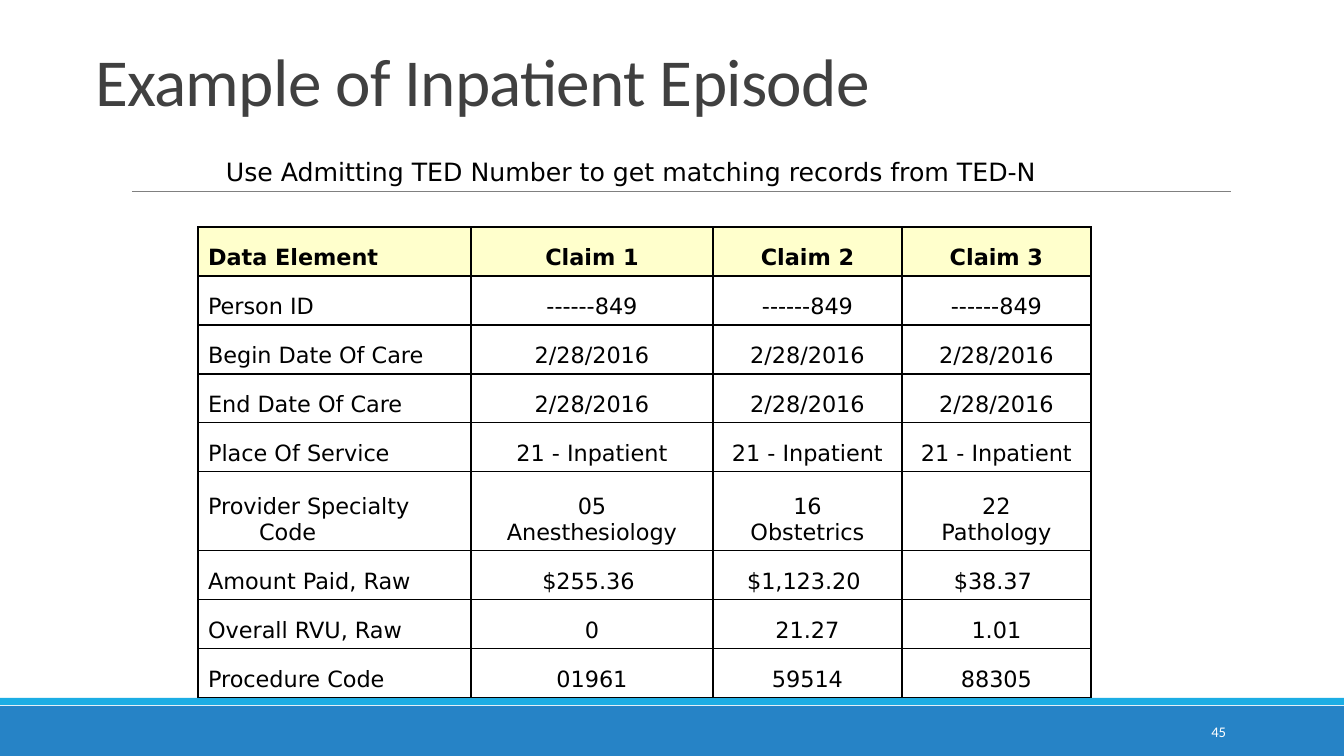
from lxml import etree
from pptx import Presentation
from pptx import util as u
from pptx.dml.color import RGBColor
from pptx.enum import shapes, text
from pptx.oxml.ns import qn

SCALE = 914400 / 100.8  # EMU in one px
INK = "000000"
THEME = {
    "bar": "2683C6", "strip": "1CADE4", "rule": "808080",
    "head": "FFFFCC", "cell": "FFFFFF", "grid": INK,
    "title": {"name": "Calibri", "size": 48, "color": "404040"},
    "page": {"name": "Calibri", "size": 10.5, "color": "FFFFFF"},
    "note": {"name": "DejaVu Sans", "size": 18, "color": INK},
    "label": {"name": "DejaVu Sans", "size": 16, "color": INK, "bold": True},
    "value": {"name": "DejaVu Sans", "size": 16, "color": INK, "bold": False},
}


def px(*nums):
    """Turn px lengths into a list of EMU lengths."""
    return [u.Emu(round(n * SCALE)) for n in nums]


def dress(para, style):
    """Apply a theme text style to each run of a paragraph."""
    for run in para.runs:
        for key, val in THEME[style].items():
            if key == "color":
                run.font.color.rgb = RGBColor.from_string(val)
            else:
                setattr(run.font, key, u.Pt(val) if key == "size" else val)


deck = Presentation()
deck.slide_width, deck.slide_height = px(1344, 756)
slide = deck.slides.add_slide(deck.slide_layouts[5])
items = slide.shapes

# Footer bars and rule
for name, box in (("bar", (0, 706, 1344, 50)), ("strip", (0, 698, 1344, 7))):
    bar = items.add_shape(shapes.MSO_SHAPE.RECTANGLE, *px(*box))
    bar.shadow.inherit = False
    bar.fill.solid()
    bar.fill.fore_color.rgb = RGBColor.from_string(THEME[name])
    bar.line.fill.background()

rule = items.add_connector(shapes.MSO_CONNECTOR.STRAIGHT, *px(132, 191, 1231, 191))
rule.line.color.rgb = RGBColor.from_string(THEME["rule"])
rule.line.width = u.Pt(0.5)
etree.SubElement(rule._element.spPr, qn("a:effectLst"))

# Title
title = items.title
title.left, title.top, title.width, title.height = px(85, 33, 1176, 92)
frame = title.text_frame
frame.text = "Example of Inpatient Episode"
frame.auto_size = text.MSO_AUTO_SIZE.NONE
frame.vertical_anchor = text.MSO_ANCHOR.BOTTOM
para = frame.paragraphs[0]
para.alignment = text.PP_ALIGN.LEFT
para.line_spacing = 0.85
dress(para, "title")
para.runs[0].font._element.set("spc", "-50")

# Claims table
ROWS = (
    ("Data Element", "Claim 1", "Claim 2", "Claim 3"),
    ("Person ID",) + ("------849",) * 3,
    ("Begin Date Of Care",) + ("2/28/2016",) * 3,
    ("End Date Of Care",) + ("2/28/2016",) * 3,
    ("Place Of Service",) + ("21 - Inpatient",) * 3,
    ("Provider Specialty Code", "05\nAnesthesiology", "16\nObstetrics", "22\nPathology"),
    ("Amount Paid, Raw", "$255.36 ", "$1,123.20 ", "$38.37 "),
    ("Overall RVU, Raw", "0", "21.27", "1.01"),
    ("Procedure Code", "01961", "59514", "88305"),
)
WIDTHS = (273, 242, 189, 189)
TALL = 5
HEIGHTS = [79 if r == TALL else 49 for r in range(len(ROWS))]
INDENT = px(51)[0]

table = items.add_table(len(ROWS), len(WIDTHS),
                        *px(198, 227, sum(WIDTHS), sum(HEIGHTS))).table
table.first_row = table.horz_banding = False
for col, width in zip(table.columns, px(*WIDTHS)):
    col.width = width
for row, height in zip(table.rows, px(*HEIGHTS)):
    row.height = height

for r, words in enumerate(ROWS):
    for c, word in enumerate(words):
        cell = table.cell(r, c)
        cell.text = word
        cell.vertical_anchor = text.MSO_ANCHOR.BOTTOM
        for para in cell.text_frame.paragraphs:
            para.alignment = text.PP_ALIGN.CENTER if c else text.PP_ALIGN.LEFT
            props = para._p.get_or_add_pPr()
            props.set("marL", str(INDENT))
            props.set("indent", str(-INDENT))
            dress(para, "value" if r else "label")
        props = cell._tc.get_or_add_tcPr()
        for side in "LRTB":
            edge = etree.SubElement(props, qn(f"a:ln{side}"), w=str(u.Pt(1)))
            fill = etree.SubElement(edge, qn("a:solidFill"))
            etree.SubElement(fill, qn("a:srgbClr"), val=THEME["grid"])
        cell.fill.solid()
        cell.fill.fore_color.rgb = RGBColor.from_string(THEME["cell" if r else "head"])

# Page number and note
LEFT, RIGHT = text.PP_ALIGN.LEFT, text.PP_ALIGN.RIGHT
TOP, MIDDLE = text.MSO_ANCHOR.TOP, text.MSO_ANCHOR.MIDDLE
for style, word, box, align, anchor in (
    ("page", "45", (1092, 712, 144, 40), RIGHT, MIDDLE),
    ("note", "Use Admitting TED Number to get matching records from TED-N",
     (216, 151, 901, 40), LEFT, TOP),
):
    frame = items.add_textbox(*px(*box)).text_frame
    frame.word_wrap = True
    frame.vertical_anchor = anchor
    frame.text = word
    frame.paragraphs[0].alignment = align
    dress(frame.paragraphs[0], style)

deck.save("out.pptx")
